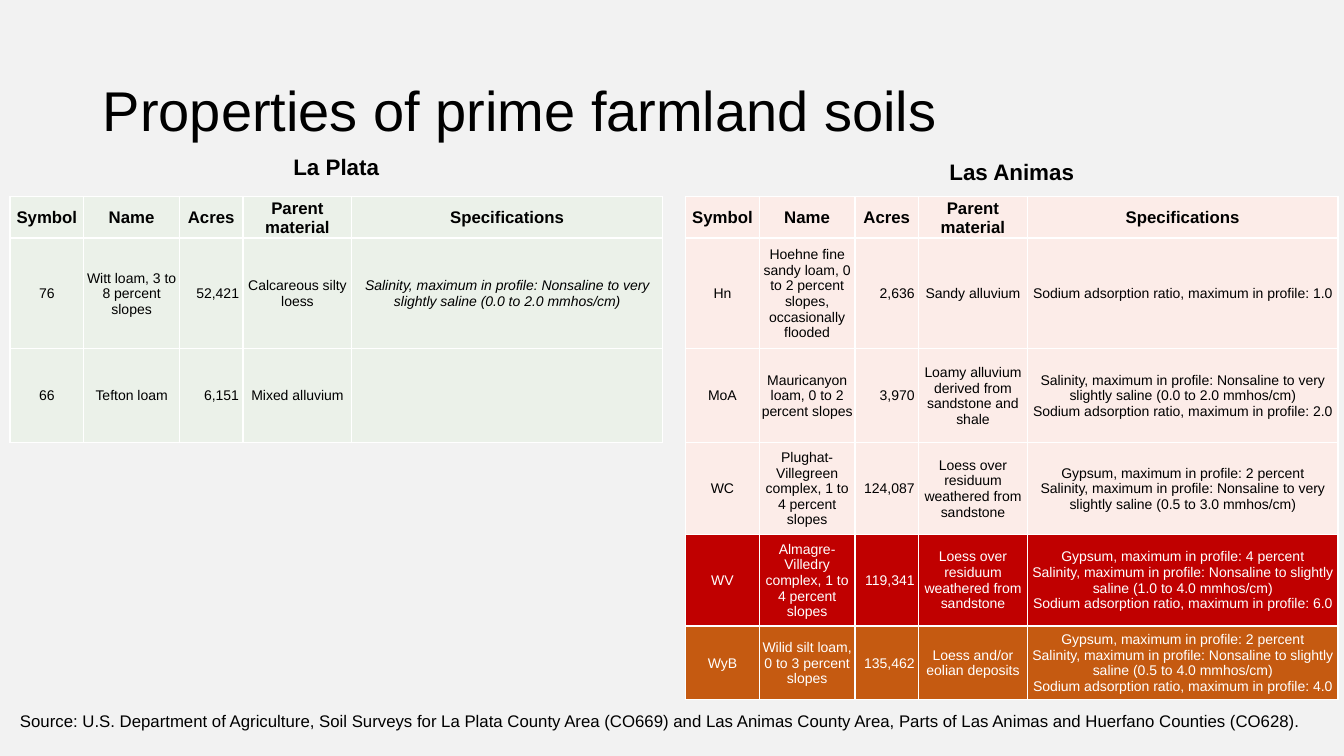
from lxml import etree
from pptx import Presentation
from pptx.dml.color import RGBColor
from pptx.enum.text import MSO_ANCHOR, PP_ALIGN
from pptx.oxml.ns import qn
from pptx.util import Inches, Pt

CENTER, LEFT, RIGHT = PP_ALIGN.CENTER, PP_ALIGN.LEFT, PP_ALIGN.RIGHT
MIDDLE, BOTTOM, TOP = MSO_ANCHOR.MIDDLE, MSO_ANCHOR.BOTTOM, MSO_ANCHOR.TOP

FONT = "Arial"
BLACK, WHITE = "000000", "FFFFFF"
BACKGROUND = "F2F2F2"
GREEN, PINK, RED, ORANGE = "EBF1E9", "FCECE8", "C00000", "C55A11"

LEFT_X, RIGHT_X, TABLE_Y, TABLE_W = 0.1, 6.8, 1.95, 6.47
COL_WIDTHS = [0.73, 0.95, 0.63, 1.08, 3.08]
ROW_HEIGHTS = [0.39, 1.1, 0.93, 0.91, 0.91, 0.73]
ACRES_COL, SPEC_COL = 2, 4

HEADER = ["Symbol", "Name", "Acres", "Parent material", "Specifications"]
SALINITY = "Salinity, maximum in profile: Nonsaline to "
SODIUM = "Sodium adsorption ratio, maximum in profile: "
GYPSUM = "Gypsum, maximum in profile: "
LOESS = "Loess over residuum weathered from sandstone"

LA_PLATA = [
    ["76", "Witt loam, 3 to 8 percent slopes", "52,421", "Calcareous silty loess",
     SALINITY + "very slightly saline (0.0 to 2.0 mmhos/cm)"],
    ["66", "Tefton loam", "6,151", "Mixed alluvium", ""],
]
LAS_ANIMAS = [
    ["Hn", "Hoehne fine sandy loam, 0 to 2 percent slopes, occasionally flooded",
     "2,636", "Sandy alluvium", SODIUM + "1.0"],
    ["MoA", "Mauricanyon loam, 0 to 2 percent slopes", "3,970",
     "Loamy alluvium derived from sandstone and shale",
     SALINITY + "very slightly saline (0.0 to 2.0 mmhos/cm)\n" + SODIUM + "2.0"],
    ["WC", "Plughat-Villegreen complex, 1 to 4 percent slopes", "124,087", LOESS,
     GYPSUM + "2 percent\n" + SALINITY + "very slightly saline (0.5 to 3.0 mmhos/cm)"],
    ["WV", "Almagre-Villedry complex, 1 to 4 percent slopes", "119,341", LOESS,
     GYPSUM + "4 percent\n" + SALINITY + "slightly saline (1.0 to 4.0 mmhos/cm)\n"
     + SODIUM + "6.0"],
    ["WyB", "Wilid silt loam, 0 to 3 percent slopes", "135,462",
     "Loess and/or eolian deposits",
     GYPSUM + "2 percent\n" + SALINITY + "slightly saline (0.5 to 4.0 mmhos/cm)\n"
     + SODIUM + "4.0"],
]


def rgb(color):
    return RGBColor.from_string(color)


def write(tf, text, size, color=BLACK, bold=False, italic=False, align=LEFT):
    """Fill the first paragraph; newlines become line breaks."""
    p = tf.paragraphs[0]
    p.text = text
    p.alignment = align
    p.font.name = FONT
    p.font.size = Pt(size)
    p.font.bold = bold
    p.font.italic = italic
    p.font.color.rgb = rgb(color)
    return p


def set_title(slide, text):
    title = slide.shapes.title
    title.left, title.top = Inches(0.92), Inches(0.4)
    title.width, title.height = Inches(11.5), Inches(1.45)
    title.text_frame.vertical_anchor = MIDDLE
    write(title.text_frame, text, 40).line_spacing = 0.9


def add_text(slide, text, x, y, w, h, size, anchor=TOP, **style):
    box = slide.shapes.add_textbox(Inches(x), Inches(y), Inches(w), Inches(h))
    tf = box.text_frame
    tf.word_wrap = True
    tf.vertical_anchor = anchor
    return write(tf, text, size, **style)


def set_borders(cell, color):
    tc_pr = cell._tc.get_or_add_tcPr()
    for i, side in enumerate(("a:lnL", "a:lnR", "a:lnT", "a:lnB")):
        ln = etree.Element(qn(side), w=str(Pt(1)))
        fill = etree.SubElement(ln, qn("a:solidFill"))
        etree.SubElement(fill, qn("a:srgbClr"), val=color)
        tc_pr.insert(i, ln)


def format_cell(cell, fill):
    cell.margin_left = cell.margin_right = cell.margin_top = Inches(0.01)
    cell.margin_bottom = 0
    cell.vertical_anchor = MIDDLE
    cell.fill.solid()
    cell.fill.fore_color.rgb = rgb(fill)
    set_borders(cell, WHITE)


def add_soil_table(slide, x, soils, fill, highlights=None, italic_symbols=()):
    """Add a soil table; highlights maps a soil symbol to its row fill."""
    highlights = highlights or {}
    rows = [HEADER] + soils
    heights = ROW_HEIGHTS[:len(rows)]
    table = slide.shapes.add_table(
        len(rows), len(HEADER), Inches(x), Inches(TABLE_Y),
        Inches(TABLE_W), Inches(sum(heights))).table
    for column, width in zip(table.columns, COL_WIDTHS):
        column.width = Inches(width)
    for r, (values, height) in enumerate(zip(rows, heights)):
        table.rows[r].height = Inches(height)
        symbol, header = values[0], r == 0
        color = WHITE if symbol in highlights else BLACK
        for c, value in enumerate(values):
            cell = table.cell(r, c)
            format_cell(cell, highlights.get(symbol, fill))
            acres = c == ACRES_COL and not header
            if acres:
                cell.margin_right = Inches(0.04)
            write(cell.text_frame, value, 12 if header else 10, color, bold=header,
                  italic=c == SPEC_COL and symbol in italic_symbols,
                  align=RIGHT if acres else CENTER)


def main():
    prs = Presentation()
    prs.slide_width, prs.slide_height = Inches(13.33), Inches(7.5)
    slide = prs.slides.add_slide(prs.slide_layouts[5])
    slide.background.fill.solid()
    slide.background.fill.fore_color.rgb = rgb(BACKGROUND)

    set_title(slide, "Properties of prime farmland soils")
    for county, x, height in (("La Plata", LEFT_X, 0.43), ("Las Animas", RIGHT_X, 0.48)):
        p = add_text(slide, county, x, 1.41, TABLE_W, height, 16,
                     anchor=BOTTOM, bold=True, align=CENTER)
        p.line_spacing = 0.9
    add_soil_table(slide, RIGHT_X, LAS_ANIMAS, PINK, {"WV": RED, "WyB": ORANGE})
    add_soil_table(slide, LEFT_X, LA_PLATA, GREEN, italic_symbols=("76",))
    add_text(slide, "Source: U.S. Department of Agriculture, Soil Surveys for La Plata "
             "County Area (CO669) and Las Animas County Area, Parts of Las Animas and "
             "Huerfano Counties (CO628).", LEFT_X, 7, 13.17, 0.3, 12)
    prs.save("out.pptx")


if __name__ == "__main__":
    main()
